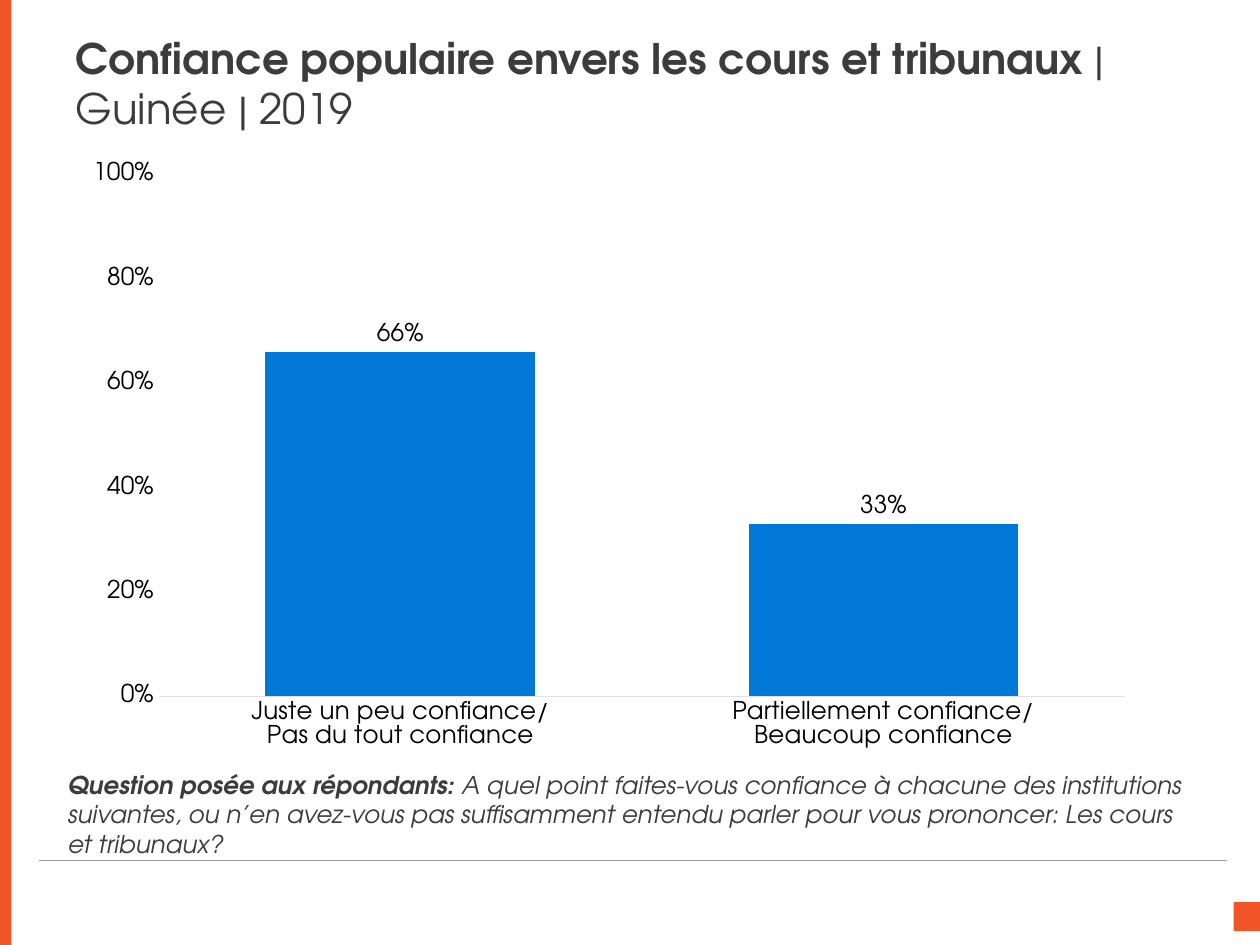
from lxml import etree
from pptx import Presentation
from pptx import util as u
from pptx.chart.data import CategoryChartData
from pptx.dml.color import RGBColor
from pptx.enum import chart as ch, shapes, text
from pptx.oxml import parse_xml
from pptx.oxml.ns import nsdecls, qn

FONT = "TeX Gyre Adventor"
ORANGE = RGBColor(0xF2, 0x55, 0x28)
BLUE = RGBColor(0x00, 0x79, 0xD6)
DARK = RGBColor(0x3C, 0x3C, 0x3C)
GREY = RGBColor(0x9E, 0x9E, 0x9E)
PALE = RGBColor(0xE2, 0xE2, 0xE2)
BLACK = RGBColor(0, 0, 0)


def place(shape, left, top, width, height):
    shape.left, shape.top = u.Inches(left), u.Inches(top)
    shape.width, shape.height = u.Inches(width), u.Inches(height)


def style_font(font, size, color):
    font.name, font.size = FONT, u.Pt(size)
    font.color.rgb = color


def add_block(page, left, top, width, height):
    block = page.shapes.add_shape(
        shapes.MSO_SHAPE.RECTANGLE, u.Inches(left), u.Inches(top),
        u.Inches(width), u.Inches(height))
    block.shadow.inherit = False
    block.fill.solid()
    block.fill.fore_color.rgb = ORANGE
    block.line.fill.background()


def add_rule(page, left, right, top):
    rule = page.shapes.add_connector(
        shapes.MSO_CONNECTOR.STRAIGHT, u.Inches(left), u.Inches(top),
        u.Inches(right), u.Inches(top))
    rule.line.color.rgb = GREY
    rule.line.width = u.Pt(0.25)
    etree.SubElement(rule._element.spPr, qn("a:effectLst"))


def write_lead(box, lead, rest, size, anchor, italic=False):
    """Fill a box with a bold lead followed by regular text."""
    frame = box.text_frame
    frame.word_wrap = True
    frame.auto_size = text.MSO_AUTO_SIZE.NONE
    frame.vertical_anchor = anchor
    para = frame.paragraphs[0]
    para.alignment = text.PP_ALIGN.LEFT
    para.line_spacing = 1.0
    para.space_before = u.Pt(0)
    for wording, bold in ((lead, True), (rest, False)):
        span = para.add_run()
        span.text = wording
        style_font(span.font, size, DARK)
        span.font.bold, span.font.italic = bold, italic


def set_plot_area(chart, **fractions):
    """Fix the inner plot area as fractions of the chart."""
    sizes = "".join(f'<c:{key} val="{value}"/>' for key, value in fractions.items())
    layout = parse_xml(
        f'<c:layout {nsdecls("c")}><c:manualLayout><c:layoutTarget val="inner"/>'
        f'<c:xMode val="edge"/><c:yMode val="edge"/>{sizes}'
        '</c:manualLayout></c:layout>')
    area = chart._chartSpace.chart.plotArea
    for old in area.findall(qn("c:layout")):
        area.remove(old)
    area.insert(0, layout)


def add_confidence_chart(page):
    data = CategoryChartData(number_format="0%")
    data.categories = ["Juste un peu confiance/\nPas du tout confiance",
                       "Partiellement confiance/\nBeaucoup confiance"]
    data.add_series("Series 1", (0.66, 0.33))
    chart = page.shapes.add_chart(
        ch.XL_CHART_TYPE.COLUMN_CLUSTERED, u.Inches(0.58), u.Inches(1.19),
        u.Inches(8.52), u.Inches(4.82), data).chart
    chart.has_legend = chart.has_title = False
    style_font(chart.font, 14, BLACK)

    # Axes
    for axis in (chart.category_axis, chart.value_axis):
        axis.has_major_gridlines = False
        axis.major_tick_mark = axis.minor_tick_mark = ch.XL_TICK_MARK.NONE
        style_font(axis.tick_labels.font, 14, BLACK)
    chart.category_axis.format.line.color.rgb = PALE
    chart.category_axis.format.line.width = u.Pt(0.75)
    values = chart.value_axis
    values.minimum_scale, values.maximum_scale, values.major_unit = 0, 1, 0.2
    values.format.line.fill.background()
    values.tick_labels.number_format = "0%"
    values.tick_labels.number_format_is_linked = False

    # Columns and their labels
    plot = chart.plots[0]
    plot.gap_width, plot.overlap = 79, -27
    plot.vary_by_categories = False
    series = plot.series[0]
    series.format.fill.solid()
    series.format.fill.fore_color.rgb = BLUE
    labels = series.data_labels
    labels.show_value = True
    labels.number_format = "0%"
    labels.number_format_is_linked = False
    labels.position = ch.XL_LABEL_POSITION.OUTSIDE_END
    style_font(labels.font, 14, BLACK)
    set_plot_area(chart, x=0.08, y=0.04, w=0.9, h=0.86)


def main():
    deck = Presentation()
    deck.slide_width, deck.slide_height = u.Inches(10), u.Inches(7.5)
    page = deck.slides.add_slide(deck.slide_layouts[5])

    # Page decoration
    add_block(page, 9.79, 7.16, 0.22, 0.23)
    add_rule(page, 9.74, 0.31, 6.83)
    add_block(page, 0, 0, 0.09, 7.5)

    # Title
    title = page.shapes.title
    place(title, 0.5, 0.31, 8.52, 0.69)
    write_lead(title, "Confiance populaire envers les cours et tribunaux ",
               "| Guinée | 2019", 24, text.MSO_ANCHOR.MIDDLE)

    # Survey question
    question = page.shapes.add_textbox(0, 0, 0, 0)
    place(question, 0.44, 6.06, 9.06, 0.69)
    write_lead(question, "Question posée aux répondants: ",
               "A quel point faites-vous confiance à chacune des institutions "
               "suivantes, ou n’en avez-vous pas suffisamment entendu parler "
               "pour vous prononcer: Les cours et tribunaux?",
               14, text.MSO_ANCHOR.TOP, italic=True)

    add_confidence_chart(page)
    deck.save("out.pptx")


if __name__ == "__main__":
    main()
